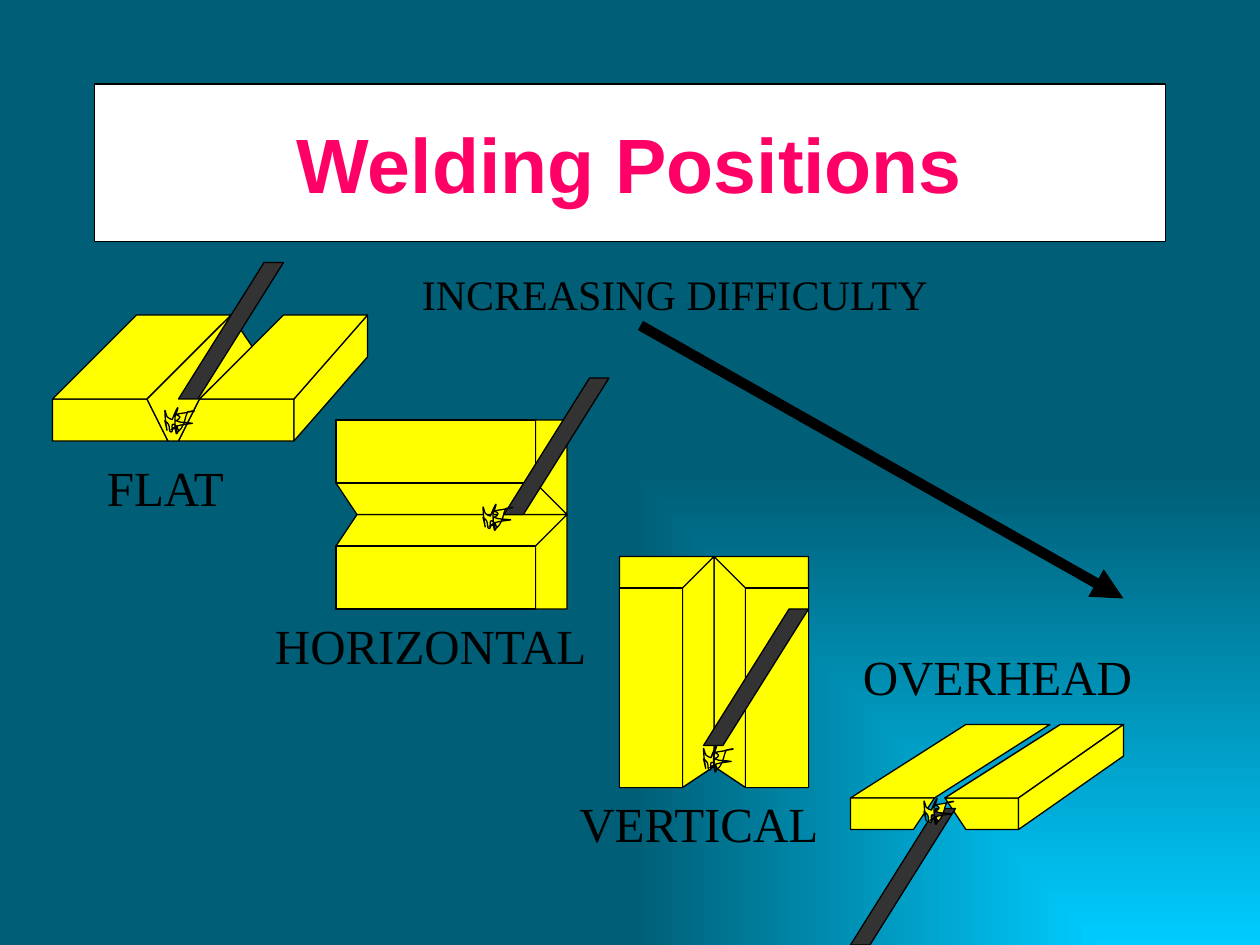
from dataclasses import dataclass

from lxml.etree import SubElement
from pptx import Presentation
from pptx.dml.color import RGBColor
from pptx.enum.shapes import MSO_CONNECTOR, MSO_SHAPE
from pptx.enum.text import MSO_ANCHOR, MSO_AUTO_SIZE, PP_ALIGN
from pptx.oxml.ns import qn
from pptx.util import Cm, Pt


@dataclass(frozen=True)
class Theme:
    glow: RGBColor = RGBColor(0x00, 0xCC, 0xFF)
    deep: RGBColor = RGBColor(0x00, 0x5E, 0x76)
    panel: RGBColor = RGBColor(0xFF, 0xFF, 0xFF)
    title: RGBColor = RGBColor(0xFF, 0x00, 0x66)
    metal: RGBColor = RGBColor(0xFF, 0xFF, 0x00)
    rod: RGBColor = RGBColor(0x33, 0x33, 0x33)
    ink: RGBColor = RGBColor(0x00, 0x00, 0x00)
    title_font: str = "Arial"
    label_font: str = "Times New Roman"
    title_size: Pt = Pt(44)
    label_size: Pt = Pt(28)
    caption_size: Pt = Pt(24)
    outline: Pt = Pt(0.75)
    arrow: Pt = Pt(6)


THEME = Theme()

FLAT_FACES = [
    [(0, 8), (9, 8), (11, 12), (0, 12)],
    [(23, 8), (14, 8), (12, 12), (23, 12)],
    [(23, 12), (30, 4), (30, 0), (23, 8)],
    [(30, 0), (23, 8), (14, 8), (22, 0)],
    [(11, 12), (9, 8), (17, 0), (19, 3), (14, 8), (12, 12)],
    [(17, 0), (8, 0), (0, 8), (9, 8)],
]
OVERHEAD_FACES = [
    [(0, 7), (11, 0), (19, 0), (8, 7)],
    [(0, 7), (0, 10), (6, 10), (8, 7)],
    [(20, 0), (9, 7), (11, 10), (16, 10), (16, 7), (9, 7)],
    [(9, 7), (20, 0), (26, 0), (16, 7)],
    [(16, 10), (26, 3), (26, 0), (16, 7)],
]
BEVELLED_PLATE = [
    (1, 0), (19, 0), (19, 6), (22, 9), (22, 0), (0, 0),
    (0, 6), (19, 6), (22, 9), (2, 9), (0, 6), (0, 0),
]
SPARK_START = (5, 26)
SPARK_CURVES = [
    (9, 22), (16, 22), (22, 21), (17, 20), (13, 21), (9, 19),
    (8, 19), (12, 18), (12, 16), (12, 15), (10, 15), (9, 14),
    (12, 13), (16, 13), (19, 12), (21, 12), (25, 11), (23, 11),
    (21, 11), (20, 12), (18, 12), (16, 16), (16, 21), (13, 25),
    (12, 26), (10, 29), (9, 28), (8, 27), (10, 25), (10, 24),
    (9, 23), (7, 21), (6, 22), (5, 23), (7, 28), (5, 28),
    (3, 28), (4, 24), (3, 22), (3, 21), (1, 20), (0, 19),
    (4, 36), (0, 21), (0, 11), (0, 9), (1, 15), (2, 16),
    (3, 18), (5, 17), (6, 18), (7, 14), (14, 0), (8, 16),
    (8, 21), (8, 25), (9, 29), (9, 31), (12, 26), (10, 25),
    (9, 24), (7, 26), (5, 26),
]


def grid(steps):
    return Cm(steps * 2.54 / 12)


def paint(shape, color):
    shape.shadow.inherit = False
    shape.fill.solid()
    shape.fill.fore_color.rgb = color
    shape.line.color.rgb = THEME.ink
    shape.line.width = THEME.outline
    return shape


def write(paragraph, words, font, size, color):
    paragraph.text = words
    paragraph.font.name = font
    paragraph.font.size = size
    paragraph.font.color.rgb = color


def add_outline(shapes, points, left, top, step=grid(1), close=True):
    builder = shapes.build_freeform(*points[0], scale=step)
    builder.add_line_segments(points[1:], close=close)
    return paint(builder.convert_to_shape(grid(left), grid(top)), THEME.metal)


def add_spark(shapes, left, top):
    spark = add_outline(shapes, [SPARK_START] + SPARK_CURVES, left, top, Cm(0.0254))
    segments = list(spark._element.iter(qn("a:lnTo")))[:len(SPARK_CURVES)]
    for first in range(0, len(segments), 3):
        curve = segments[first]
        curve.tag = qn("a:cubicBezTo")
        for segment in segments[first + 1:first + 3]:
            curve.append(segment[0])
            segment.getparent().remove(segment)


def add_rod(shapes, left, top):
    rod = shapes.add_shape(
        MSO_SHAPE.PARALLELOGRAM, grid(left), grid(top), grid(10), grid(13))
    rod.adjustments[0] = 0.815
    paint(rod, THEME.rod)


def add_label(shapes, words, left, top, width, height, size):
    label = shapes.add_textbox(grid(left), grid(top), grid(width), grid(height))
    label.text_frame.word_wrap = True
    label.text_frame.auto_size = MSO_AUTO_SIZE.SHAPE_TO_FIT_TEXT
    paragraph = label.text_frame.paragraphs[0]
    paragraph.space_before = Cm(0.12)
    write(paragraph, words, THEME.label_font, size, THEME.ink)


def add_faces(shapes, faces, left, top):
    joint = shapes.add_group_shape()
    for face in faces:
        add_outline(joint.shapes, face, left, top)


def add_bevelled_pair(shapes, left, top, rotation=0):
    joint = shapes.add_group_shape()
    mirrored = [(x, 9 - y) for x, y in BEVELLED_PLATE]
    for points, plate_top, front_top in (
            (mirrored, top + 9, top + 12), (BEVELLED_PLATE, top, top)):
        add_outline(joint.shapes, points, left, plate_top, close=False)
        front = joint.shapes.add_shape(
            MSO_SHAPE.RECTANGLE, grid(left), grid(front_top), grid(19), grid(6))
        paint(front, THEME.metal)
    joint.rotation = rotation


def add_tools(shapes, left, top, rod, spark, label, name, label_width=34):
    add_rod(shapes, left + rod[0], top + rod[1])
    add_spark(shapes, left + spark[0], top + spark[1])
    add_label(shapes, name, left + label[0], top + label[1],
              label_width, 6.84, THEME.label_size)


def add_flat(shapes, left, top):
    add_faces(shapes, FLAT_FACES, left, top)
    add_tools(shapes, left, top, (12, -5), (10.7, 7.8), (4, 13), "FLAT", 20)


def add_horizontal(shapes, left, top):
    add_bevelled_pair(shapes, left, top)
    add_tools(shapes, left, top, (16, -4), (14, 7), (-7, 18), "HORIZONTAL")


def add_vertical(shapes, left, top):
    add_bevelled_pair(shapes, left - 2, top + 2, rotation=270)
    add_tools(shapes, left, top, (8, 5), (8, 17), (-5, 22), "VERTICAL")


def add_overhead(shapes, left, top):
    add_faces(shapes, OVERHEAD_FACES, left, top)
    add_tools(shapes, left, top, (0, 8), (7, 6), (0, -8), "OVERHEAD")


def add_title(shapes, left, top, width, height):
    title = paint(shapes.add_shape(
        MSO_SHAPE.RECTANGLE, grid(left), grid(top), grid(width), grid(height)), THEME.panel)
    title.text_frame.vertical_anchor = MSO_ANCHOR.MIDDLE
    paragraph = title.text_frame.paragraphs[0]
    paragraph.alignment = PP_ALIGN.CENTER
    write(paragraph, "Welding Positions", THEME.title_font, THEME.title_size, THEME.title)
    paragraph.font.bold = True


def add_difficulty(shapes, left, top):
    arrow = shapes.add_connector(
        MSO_CONNECTOR.STRAIGHT, grid(left + 22), grid(top + 6), grid(left + 68), grid(top + 32))
    arrow.line.color.rgb = THEME.ink
    arrow.line.width = THEME.arrow
    SubElement(arrow.line._get_or_add_ln(), qn("a:tailEnd"), type="triangle")
    SubElement(arrow._element.spPr, qn("a:effectLst"))
    add_label(shapes, "INCREASING DIFFICULTY", left, top, 54, 6, THEME.caption_size)


def fill_background(slide):
    fill = slide.background.fill
    fill.gradient()
    for stop, color in zip(fill.gradient_stops, (THEME.glow, THEME.deep)):
        stop.color.rgb = color
    direction = next(slide._element.iter(qn("a:lin")))
    direction.tag = qn("a:path")
    direction.attrib.clear()
    direction.set("path", "rect")
    SubElement(direction, qn("a:fillToRect"), l="100000", t="100000")


def main():
    deck = Presentation()
    deck.slide_width, deck.slide_height = Cm(25.4), Cm(19.05)
    slide = deck.slides.add_slide(deck.slide_layouts[6])
    fill_background(slide)
    add_title(slide.shapes, 9, 8, 102, 15)
    add_flat(slide.shapes, 5, 30)
    add_horizontal(slide.shapes, 32, 40)
    add_vertical(slide.shapes, 59, 53)
    add_overhead(slide.shapes, 81, 69)
    add_difficulty(slide.shapes, 39, 25)
    deck.save("out.pptx")


if __name__ == "__main__":
    main()
